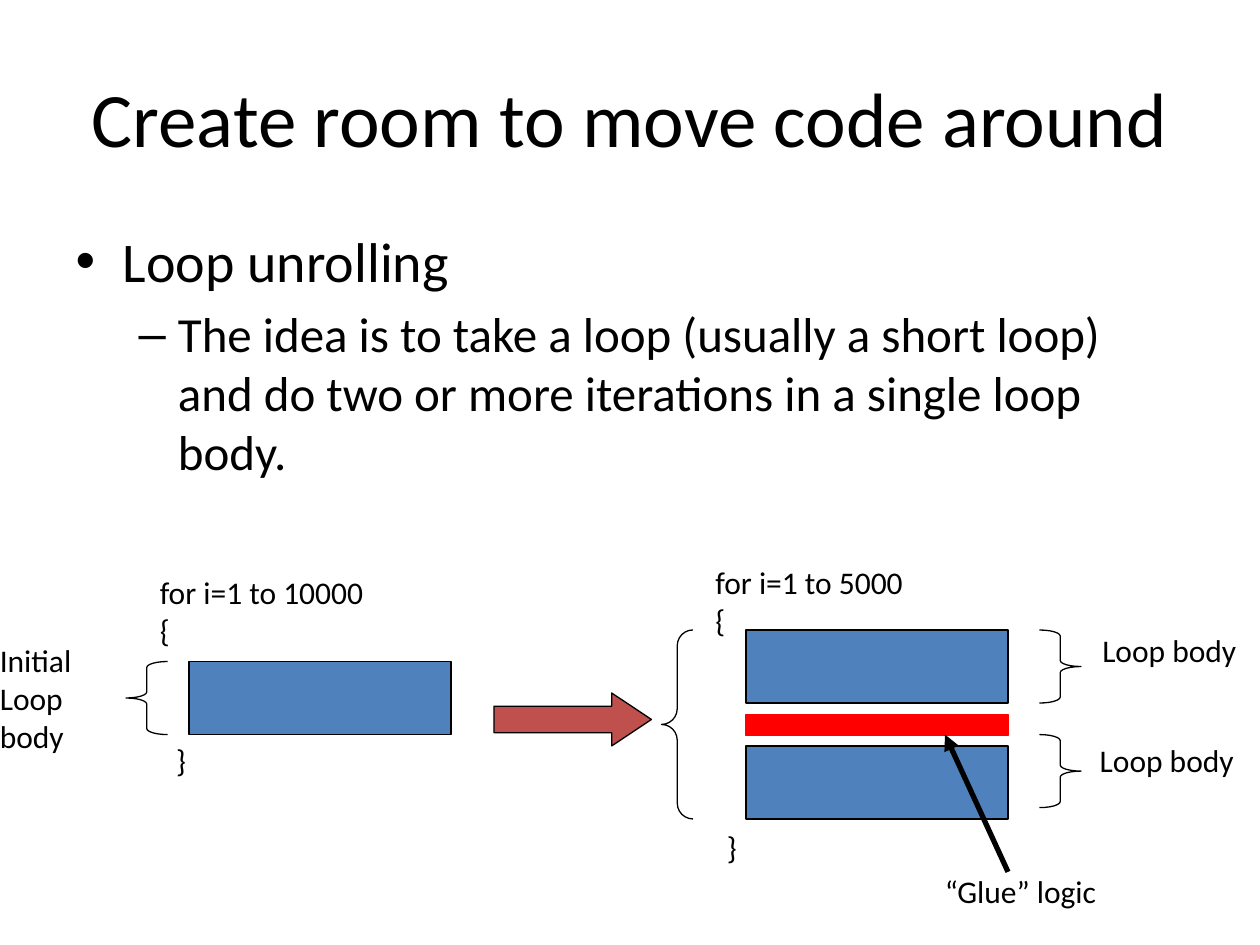
from lxml import etree
from pptx import Presentation
from pptx.dml.color import RGBColor
from pptx.enum.shapes import MSO_CONNECTOR, MSO_SHAPE
from pptx.enum.text import MSO_AUTO_SIZE
from pptx.oxml.ns import qn
from pptx.util import Inches, Pt

RECT, ARROW = MSO_SHAPE.RECTANGLE, MSO_SHAPE.RIGHT_ARROW
LEFT, RIGHT = MSO_SHAPE.LEFT_BRACE, MSO_SHAPE.RIGHT_BRACE
FONT = "Calibri"
COLORS = {"ink": "000000", "body": "4F81BD", "glue": "FF0000", "arrow": "C0504D"}

TITLE = "Create room to move code around"
POINTS = [  # level, size, text
    (0, 32, "Loop unrolling"),
    (1, 28, "The idea is to take a loop (usually a short loop) "
            "and do two or more iterations in a single loop body."),
]

WIDE, HIGH = 2.08, 0.58  # one loop body
OLD_X, OLD_Y = 1.5, 5.25
NEW_X, NEW_Y = 5.92, 5
STEP = 0.92  # from one unrolled body to the next

SHAPES = [  # kind, box, fill, line, adjustments
    (RECT, (OLD_X, OLD_Y, WIDE, HIGH), "body", "ink", ()),
    (LEFT, (1, OLD_Y, 0.33, HIGH), None, "ink", (0.146, 0.5)),
    (RECT, (NEW_X, NEW_Y + STEP, WIDE, HIGH), "body", "ink", ()),
    (RECT, (NEW_X, NEW_Y, WIDE, HIGH), "body", "ink", ()),
    (RECT, (NEW_X, 5.67, WIDE, 0.17), "glue", "glue", ()),
    (RIGHT, (8.25, NEW_Y, 0.33, HIGH), None, "ink", (0.146, 0.5)),
    (RIGHT, (8.25, 5.83, 0.33, HIGH), None, "ink", (0.146, 0.5)),
    (ARROW, (3.92, 5.5, 1.25, 0.42), "arrow", "ink", (0.5, 0.75)),
    (LEFT, (5.25, NEW_Y, 0.25, STEP + HIGH), None, "ink", (0.5, 0.5)),
]
LABELS = [  # box, lines
    ((-0.1, 5.04, 0.85, 1), ["Initial", "Loop", "body"]),
    ((1.17, 4.5, 2.01, 0.7), ["for i=1 to 10000", "{"]),
    ((1.3, 5.83, 0.28, 0.4), ["}"]),
    ((5.58, 4.42, 1.88, 0.7), ["for i=1 to 5000", "{"]),
    ((5.67, 6.52, 0.28, 0.4), ["}"]),
    ((8.65, 4.96, 1.37, 0.4), ["Loop body"]),
    ((8.63, 5.83, 1.37, 0.4), ["Loop body"]),
    ((7.4, 6.87, 1.48, 0.4), ["“Glue” logic"]),
]
POINTER = (8, 6.92, 7.5, 5.83)


def color(name):
    return RGBColor.from_string(COLORS[name])


def place(shape, box):
    shape.left, shape.top, shape.width, shape.height = map(Inches, box)


def style(para, size):
    para.font.name, para.font.size = FONT, Pt(size)
    para.font.color.rgb = color("ink")


def fill_text(frame, rows):
    """Write one paragraph for each (level, size, text)."""
    for i, (level, size, text) in enumerate(rows):
        para = frame.add_paragraph() if i else frame.paragraphs[0]
        para.text, para.level = text, level
        style(para, size)


def add_shape(slide, kind, box, fill, line, adjust):
    shape = slide.shapes.add_shape(kind, *map(Inches, box))
    shape.shadow.inherit = False
    if fill:
        shape.fill.solid()
        shape.fill.fore_color.rgb = color(fill)
    else:
        shape.fill.background()
    shape.line.color.rgb = color(line)
    shape.line.width = Pt(0.75)
    for i, value in enumerate(adjust):
        shape.adjustments[i] = value


def add_label(slide, box, lines):
    frame = slide.shapes.add_textbox(*map(Inches, box)).text_frame
    frame.word_wrap = False
    frame.auto_size = MSO_AUTO_SIZE.SHAPE_TO_FIT_TEXT
    fill_text(frame, [(0, 18, text) for text in lines])


def add_pointer(slide, ends):
    link = slide.shapes.add_connector(MSO_CONNECTOR.STRAIGHT, *map(Inches, ends))
    link.line.color.rgb = color("ink")
    link.line.width = Pt(3)
    props = link.line._get_or_add_ln()
    etree.SubElement(props, qn("a:tailEnd"), type="triangle")
    etree.SubElement(props.getparent(), qn("a:effectLst"))


def main():
    deck = Presentation()
    deck.slide_width, deck.slide_height = Inches(10), Inches(7.5)
    # Title and Content: its body supplies the bullets and indents
    slide = deck.slides.add_slide(deck.slide_layouts[1])

    title, body = slide.shapes.title, slide.placeholders[1]
    place(title, (0.5, 0.3, 9, 1.25))
    fill_text(title.text_frame, [(0, 44, TITLE)])
    place(body, (0.5, 1.75, 9, 2.58))
    body.text_frame.auto_size = MSO_AUTO_SIZE.NONE
    fill_text(body.text_frame, POINTS)

    for item in SHAPES:
        add_shape(slide, *item)
    add_pointer(slide, POINTER)
    for item in LABELS:
        add_label(slide, *item)
    deck.save("out.pptx")


if __name__ == "__main__":
    main()
